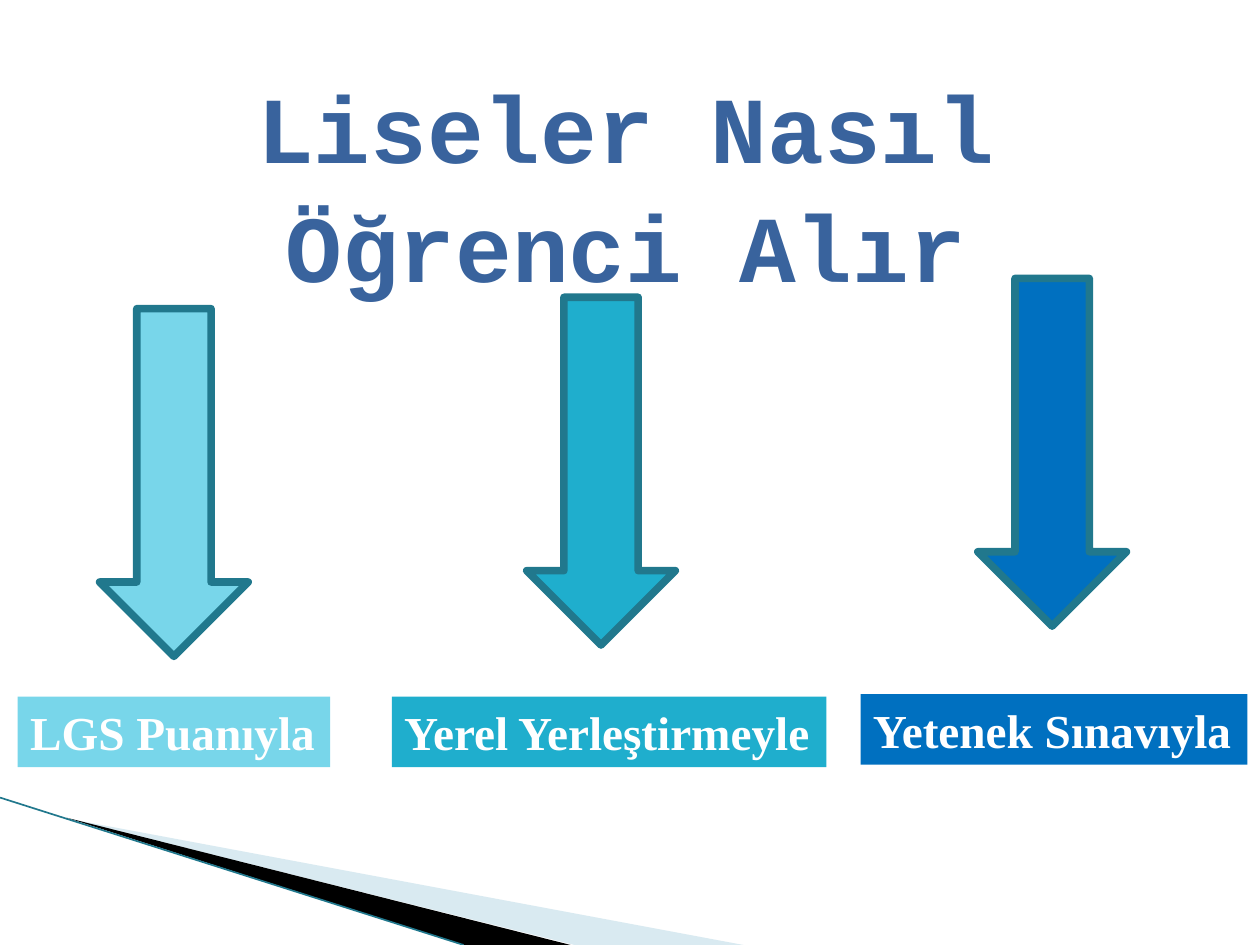
from dataclasses import dataclass

from lxml import etree
from pptx import Presentation
from pptx.dml.color import RGBColor
from pptx.enum.shapes import MSO_CONNECTOR, MSO_SHAPE
from pptx.enum.text import MSO_ANCHOR, MSO_AUTO_SIZE, PP_ALIGN
from pptx.oxml.ns import qn
from pptx.util import Inches, Pt

ARROW = MSO_SHAPE.RIGHT_ARROW
RECTANGLE = MSO_SHAPE.RECTANGLE
STRAIGHT = MSO_CONNECTOR.STRAIGHT
CENTER, LEFT = PP_ALIGN.CENTER, PP_ALIGN.LEFT
TOP, MIDDLE = MSO_ANCHOR.TOP, MSO_ANCHOR.MIDDLE

COLUMNS, ROWS = 100, 75
OUTLINE = "21788D"
ARROW_LENGTH, ARROW_BREADTH = 27.6, 11.8
LABEL_HEIGHT = 5.6


@dataclass(frozen=True)
class Route:
    """One way into a school: an arrow above a label, in grid units."""
    text: str
    color: str
    arrow_left: float
    arrow_top: float
    label_left: float
    label_top: float
    label_width: float


@dataclass(frozen=True)
class Wedge:
    color: str
    opacity: int
    points: tuple[tuple[float, float], ...]


ROUTES = (
    Route("LGS Puanıyla", "78D6EA", 0, 32.4, 1.4, 55.3, 24.8),
    Route("Yerel Yerleştirmeyle", "1FAECD", 33.9, 31.5, 31.1, 55.3, 34.5),
    Route("Yetenek Sınavıyla", "0070C0", 69.7, 30, 68.3, 55.1, 30.7),
)
WEDGES = (
    Wedge("A0CBDC", 40, ((5.5, 65), (59, 75), (45.6, 75))),
    Wedge("000000", 100, ((5.3, 64.9), (45.3, 75), (36.8, 75))),
)

deck = Presentation()
deck.slide_width, deck.slide_height = Inches(10), Inches(7.5)
page = deck.slides.add_slide(deck.slide_layouts[6])


def x(columns: float) -> int:
    return round(deck.slide_width * columns / COLUMNS)


def y(rows: float) -> int:
    return round(deck.slide_height * rows / ROWS)


def rgb(color: str) -> RGBColor:
    return RGBColor.from_string(color)


def paint(shape, color: str) -> None:
    """Fill a shape flatly, with no outline or shadow."""
    shape.shadow.inherit = False
    shape.fill.solid()
    shape.fill.fore_color.rgb = rgb(color)
    shape.line.fill.background()


def write(para, text: str, font: str, size: float, color: str) -> None:
    span = para.add_run()
    span.text = text
    span.font.name = font
    span.font.size = Pt(size)
    span.font.bold = True
    span.font.color.rgb = rgb(color)


def draw_wedge(wedge: Wedge) -> None:
    start, *others = [(x(column), y(row)) for column, row in wedge.points]
    builder = page.shapes.build_freeform(*start)
    builder.add_line_segments(others, close=True)
    shape = builder.convert_to_shape()
    paint(shape, wedge.color)
    if wedge.opacity < 100:
        tint = shape.fill._xPr.find(".//" + qn("a:srgbClr"))
        etree.SubElement(tint, qn("a:alpha"), val=str(wedge.opacity * 1000))


def draw_edge() -> None:
    edge = page.shapes.add_connector(STRAIGHT, 0, y(63.3), x(36.8), y(75))
    edge.line.color.rgb = rgb(OUTLINE)
    edge.line.width = Pt(0.95)
    etree.SubElement(edge._element.spPr, qn("a:effectLst"))


def draw_title() -> None:
    box = page.shapes.add_textbox(x(3.4), y(3.6), x(91.3), y(16.5))
    frame = box.text_frame
    frame.word_wrap = True
    frame.vertical_anchor = TOP
    frame.margin_left = Inches(0.22)
    frame.margin_top = Inches(0.14)
    para = frame.paragraphs[0]
    para.alignment = CENTER
    para.line_spacing = 1.05
    write(para, "Liseler Nasıl Öğrenci Alır", "Courier New", 54, "39639D")


def draw_arrow(route: Route) -> None:
    arrow = page.shapes.add_shape(ARROW, x(route.arrow_left), y(route.arrow_top),
                                  x(ARROW_LENGTH), y(ARROW_BREADTH))
    arrow.rotation = 90
    paint(arrow, route.color)
    arrow.line.color.rgb = rgb(OUTLINE)
    arrow.line.width = Pt(4.33)
    etree.SubElement(arrow.line._get_or_add_ln(), qn("a:round"))


def draw_label(route: Route) -> None:
    box = page.shapes.add_shape(RECTANGLE, x(route.label_left), y(route.label_top),
                                x(route.label_width), y(LABEL_HEIGHT))
    paint(box, route.color)
    frame = box.text_frame
    frame.word_wrap = False
    frame.auto_size = MSO_AUTO_SIZE.SHAPE_TO_FIT_TEXT
    frame.vertical_anchor = MIDDLE
    para = frame.paragraphs[0]
    para.alignment = LEFT
    write(para, route.text, "Times New Roman", 27, "FFFFFF")


for wedge in WEDGES:
    draw_wedge(wedge)
draw_edge()
draw_title()
for route in ROUTES:
    draw_arrow(route)
    draw_label(route)

deck.save("out.pptx")
